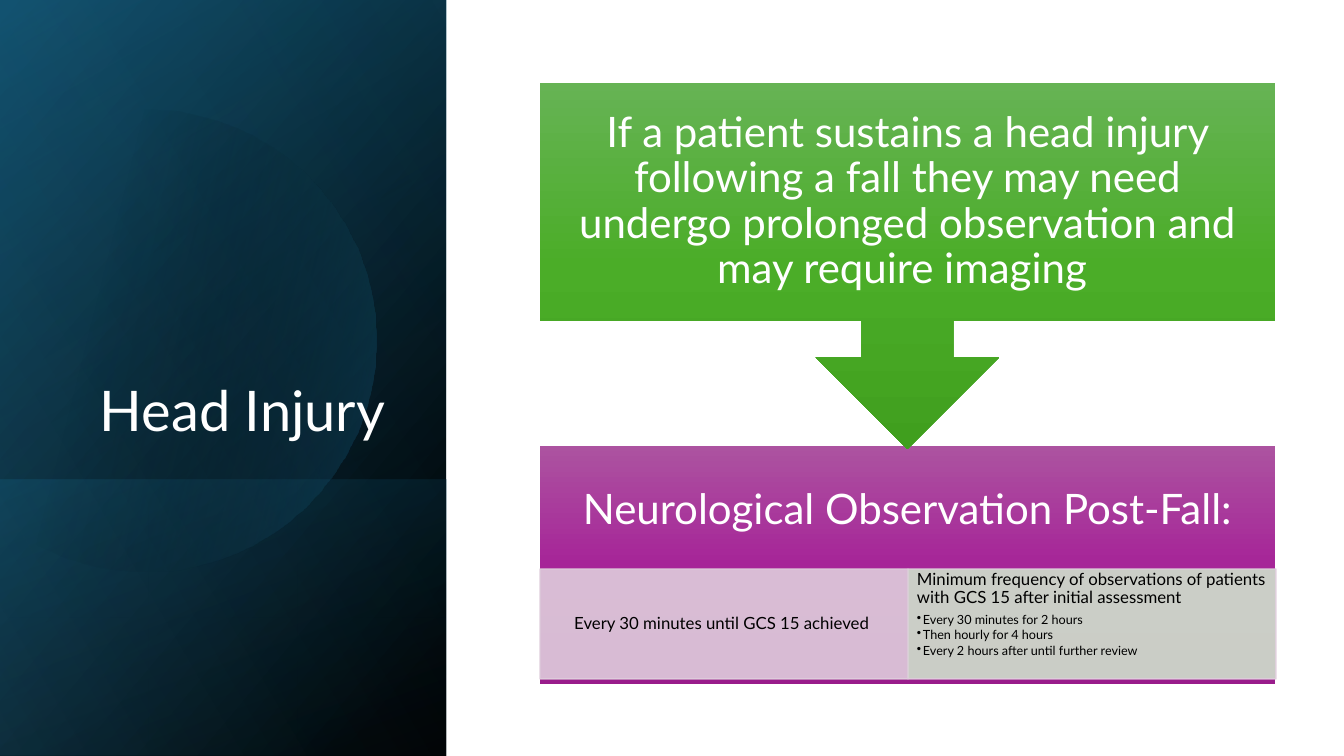
"""Build the head injury slide: a dark title panel beside an observation flow."""
import math

import pptx
import pptx.util
from lxml import etree
from pptx.dml.color import RGBColor
from pptx.enum.shapes import MSO_SHAPE
from pptx.enum.text import MSO_ANCHOR, PP_ALIGN
from pptx.oxml.ns import qn

PX = 914400 / 100.8
BLACK = RGBColor(0x00, 0x00, 0x00)
WHITE = RGBColor(0xFF, 0xFF, 0xFF)
NAVY = RGBColor(0x10, 0x48, 0x62)
TEAL = RGBColor(0x15, 0x60, 0x82)
SKY = RGBColor(0x46, 0xB1, 0xE1)
GREENS = [RGBColor(0x66, 0xB3, 0x54), RGBColor(0x4B, 0xAD, 0x28), RGBColor(0x40, 0x9F, 0x1E)]
PURPLES = [RGBColor(0xAC, 0x53, 0xA0), RGBColor(0xA6, 0x25, 0x98), RGBColor(0x99, 0x1C, 0x8B)]
PALE_PURPLE = RGBColor(0xDF, 0xCD, 0xDC)
PALE_GREEN = RGBColor(0xD0, 0xE1, 0xCD)


def paint_gradient(shape, angle, stops):
    shape.shadow.inherit = False
    shape.line.fill.background()
    shape.fill.gradient()
    shape.fill.gradient_angle = (360 - angle) % 360
    stop_list = shape._element.spPr.find(qn("a:gradFill")).find(qn("a:gsLst"))
    for old_stop in list(stop_list):
        stop_list.remove(old_stop)
    for position, color, opacity in stops:
        stop = etree.SubElement(stop_list, qn("a:gs"), pos=str(position * 1000))
        tint = etree.SubElement(stop, qn("a:srgbClr"), val=str(color))
        if opacity < 100:
            etree.SubElement(tint, qn("a:alpha"), val=str(opacity * 1000))


def write_text(shape, lines, size, color, align, anchor, insets):
    frame = shape.text_frame
    frame.word_wrap = True
    frame.vertical_anchor = anchor
    frame.margin_left, frame.margin_top, frame.margin_right, frame.margin_bottom = [
        round(inset * PX) for inset in insets]
    frame.text = "\n".join(lines)
    for paragraph in frame.paragraphs:
        paragraph.alignment = align
        paragraph.line_spacing = 0.9
        paragraph.space_after = pptx.util.Pt(round(size * 0.35, 1))
        for run in paragraph.runs:
            run.font.name = "Lato"
            run.font.size = pptx.util.Pt(size)
            run.font.color.rgb = color


deck = pptx.Presentation()
deck.slide_width, deck.slide_height = round(1344 * PX), round(756 * PX)
slide = deck.slides.add_slide(deck.slide_layouts[6])
shapes = slide.shapes

panel_layers = [
    (0, 756, 220, [(8, BLACK, 100), (100, NAVY, 100)]),
    (0, 756, 240, [(0, BLACK, 0), (99, TEAL, 46)]),
    (480, 276, 70, [(2, TEAL, 29), (100, BLACK, 30)]),
]
for top, height, angle, stops in panel_layers:
    layer = shapes.add_shape(MSO_SHAPE.RECTANGLE, 0, round(top * PX), round(446 * PX), round(height * PX))
    paint_gradient(layer, angle, stops)

center_x, center_y, radius = 145, 341, 231
reach = math.acos(-center_x / radius)
arc = [(round(center_x + radius * math.cos(turn)), round(center_y + radius * math.sin(turn)))
       for turn in (reach * step / 60 for step in range(-60, 61))]
outline = shapes.build_freeform(*arc[0], scale=PX)
outline.add_line_segments(arc[1:], close=True)
disc = outline.convert_to_shape()
paint_gradient(disc, 14, [(29, BLACK, 0), (100, TEAL, 43)])

sheen = shapes.add_shape(MSO_SHAPE.RECTANGLE, 0, 0, round(446 * PX), round(756 * PX))
paint_gradient(sheen, 150, [(0, BLACK, 0), (99, SKY, 11)])

title = shapes.add_textbox(round(65 * PX), round(185 * PX), round(343 * PX), round(264 * PX))
write_text(title, ["Head Injury "], 40, WHITE, PP_ALIGN.RIGHT, MSO_ANCHOR.BOTTOM, (10, 5, 10, 5))

flow_steps = [
    (MSO_SHAPE.RECTANGLE, 446, 238, PURPLES, 132, "Neurological Observation Post-Fall:"),
    (MSO_SHAPE.DOWN_ARROW_CALLOUT, 83, 366, GREENS, 23,
     "If a patient sustains a head injury following a fall they may need "
     "undergo prolonged observation and may require imaging "),
]
for outline_kind, top, height, shades, bottom_inset, wording in flow_steps:
    flow_step = shapes.add_shape(outline_kind, round(540 * PX), round(top * PX), round(735 * PX), round(height * PX))
    paint_gradient(flow_step, 90, [(place, shade, 100) for place, shade in zip((0, 50, 100), shades)])
    write_text(flow_step, [wording], 30, WHITE, PP_ALIGN.CENTER, MSO_ANCHOR.MIDDLE, (23, 23, 23, bottom_inset))

schedules = [
    (PALE_PURPLE, PP_ALIGN.CENTER, MSO_ANCHOR.MIDDLE, ["Every 30 minutes until GCS 15 achieved "]),
    (PALE_GREEN, PP_ALIGN.LEFT, MSO_ANCHOR.TOP, [
        "Minimum frequency of observations of patients with GCS 15 after initial assessment ",
        "Every 30 minutes for 2 hours ",
        "Then hourly for 4 hours ",
        "Every 2 hours after until further review "]),
]
for column, (tone, align, anchor, lines) in enumerate(schedules):
    schedule = shapes.add_shape(MSO_SHAPE.RECTANGLE, round((540 + 368 * column) * PX), round(569 * PX),
                                round(368 * PX), round(110 * PX))
    schedule.shadow.inherit = False
    schedule.fill.solid()
    schedule.fill.fore_color.rgb = tone
    schedule.line.color.rgb = PALE_PURPLE
    schedule.line.width = pptx.util.Pt(1)
    for tint in schedule._element.spPr.iter(qn("a:srgbClr")):
        etree.SubElement(tint, qn("a:alpha"), val="90000")
    write_text(schedule, lines, 12, BLACK, align, anchor, (9, 2, 9, 2))
    for interval in schedule.text_frame.paragraphs[1:]:
        interval.level = 1
        interval.space_after = pptx.util.Pt(1.4)
        interval.runs[0].font.size = pptx.util.Pt(9)
        properties = interval._p.get_or_add_pPr()
        properties.set("marL", str(round(6 * PX)))
        properties.set("indent", str(round(-6 * PX)))
        etree.SubElement(properties, qn("a:buChar"), char="•")

deck.save("out.pptx")
